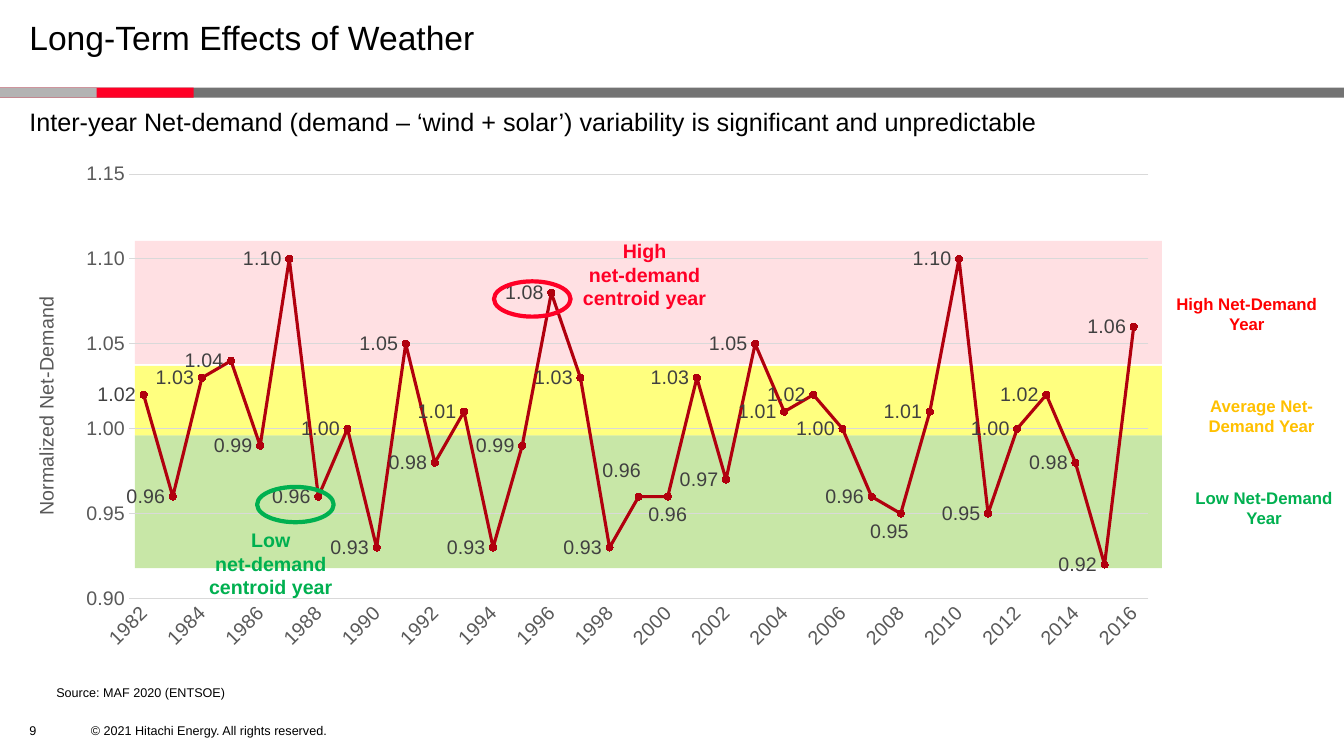
from lxml import etree
from pptx import Presentation
from pptx.chart.data import CategoryChartData
from pptx.dml.color import RGBColor
from pptx.enum.chart import XL_CHART_TYPE, XL_LABEL_POSITION, XL_MARKER_STYLE, XL_TICK_MARK
from pptx.enum.shapes import MSO_SHAPE
from pptx.enum.text import MSO_ANCHOR, PP_ALIGN
from pptx.oxml import parse_xml
from pptx.oxml.ns import nsdecls, qn
from pptx.util import Cm, Pt

RECT, OVAL = MSO_SHAPE.RECTANGLE, MSO_SHAPE.OVAL
LEFT, CENTER = PP_ALIGN.LEFT, PP_ALIGN.CENTER
TOP, MIDDLE = MSO_ANCHOR.TOP, MSO_ANCHOR.MIDDLE
ABOVE, BELOW, BESIDE = XL_LABEL_POSITION.ABOVE, XL_LABEL_POSITION.BELOW, XL_LABEL_POSITION.LEFT
NO_TICK = XL_TICK_MARK.NONE
FONT = "Arial"
HEX = {
    "black": "000000", "bar": "737373", "silver": "B3B3B3", "red": "FF0026",
    "lime": "92D050", "yellow": "FFFF00", "pink": "FFBCC2", "green": "00B050",
    "high": "FF0000", "amber": "FFC000", "line": "B1000E", "grid": "D9D9D9",
    "axis": "595959", "label": "404040",
}
COLOR = {name: RGBColor.from_string(code) for name, code in HEX.items()}


def cm(*nums):
    return [Cm(n) for n in nums]


def write(frame, text, size=14, color="black", bold=False, align=LEFT,
          anchor=TOP, wrap=True, space=None):
    """Fill a text frame with one formatted paragraph, without margins."""
    frame.margin_left = frame.margin_right = frame.margin_top = frame.margin_bottom = 0
    frame.word_wrap = wrap
    frame.vertical_anchor = anchor
    para = frame.paragraphs[0]
    para.text = text
    para.alignment = align
    para.line_spacing = space
    for font in [para.font] + [run.font for run in para.runs]:
        font.name, font.size, font.bold = FONT, Pt(size), bold
        font.color.rgb = COLOR[color]


deck = Presentation()
deck.slide_width, deck.slide_height = cm(33.87, 19.05)
slide = deck.slides.add_slide(deck.slide_layouts[5])
shapes = slide.shapes

# Title and header bar
title = shapes.title
title.left, title.top, title.width, title.height = cm(0.74, 0.25, 26.16, 1.47)
write(title.text_frame, "Long-Term Effects of Weather", size=24, anchor=MIDDLE, space=0.95)

# Header bar pieces and demand bands: top, height, left, width, colour, opacity
blocks = [(2.21, 0.25, 0, width, color, 100)
          for width, color in ((33.87, "bar"), (4.88, "red"), (2.44, "silver"))]
blocks += [
    (10.97, 3.35, 3.4, 25.88, "lime", 50),
    (9.22, 1.75, 3.4, 25.88, "yellow", 50),
    (6.07, 3.1, 3.4, 25.88, "pink", 46),
]
for top, height, left, width, color, alpha in blocks:
    block = shapes.add_shape(RECT, *cm(left, top, width, height))
    block.shadow.inherit = False
    block.fill.solid()
    block.fill.fore_color.rgb = COLOR[color]
    block.line.fill.background()
    if alpha < 100:
        tint = block._element.xpath("./p:spPr//a:srgbClr")[0]
        etree.SubElement(tint, qn("a:alpha")).set("val", str(alpha * 1000))

# Net-demand chart
demand = [
    1.02, 0.96, 1.03, 1.04, 0.99, 1.10, 0.96, 1.00, 0.93, 1.05, 0.98, 1.01,
    0.93, 0.99, 1.08, 1.03, 0.93, 0.96, 0.96, 1.03, 0.97, 1.05, 1.01, 1.02,
    1.00, 0.96, 0.95, 1.01, 1.10, 0.95, 1.00, 1.02, 0.98, 0.92, 1.06,
]
data = CategoryChartData(number_format="0.00")
data.categories = [str(1982 + i) for i in range(len(demand))]
data.add_series("Series 1", demand)
chart = shapes.add_chart(XL_CHART_TYPE.LINE_MARKERS, *cm(0.74, 3.94, 28.57, 12.78), data).chart
chart.has_legend = chart.has_title = False
chart.font.name, chart.font.size = FONT, Pt(14)
plot = chart.plots[0]
plot.vary_by_categories = False

area = chart._chartSpace.xpath("c:chart/c:plotArea")[0]
for old in area.findall(qn("c:layout")):
    area.remove(old)
area.insert(0, parse_xml(
    f'<c:layout {nsdecls("c")}><c:manualLayout><c:layoutTarget val="inner"/>'
    '<c:xMode val="edge"/><c:yMode val="edge"/><c:x val="0.088"/><c:y val="0.035"/>'
    '<c:w val="0.899"/><c:h val="0.837"/></c:manualLayout></c:layout>'))

years, scale = chart.category_axis, chart.value_axis
for axis in (years, scale):
    axis.major_tick_mark = axis.minor_tick_mark = NO_TICK
    font = axis.tick_labels.font
    font.name, font.size, font.color.rgb = FONT, Pt(14), COLOR["axis"]
years.has_major_gridlines = False
scale.has_major_gridlines = True
for line in (years.format.line, scale.major_gridlines.format.line):
    line.color.rgb, line.width = COLOR["grid"], Pt(0.75)
scale.format.line.fill.background()
scale.minimum_scale, scale.maximum_scale, scale.major_unit = 0.9, 1.15, 0.05
scale.tick_labels.number_format = "0.00"
scale.tick_labels.number_format_is_linked = False
years._element.xpath("c:txPr/a:bodyPr")[0].set("rot", "-2700000")
years._element.xpath("c:noMultiLvlLbl")[0].addprevious(
    parse_xml(f'<c:tickLblSkip {nsdecls("c")} val="2"/>'))
name = scale.axis_title.text_frame.paragraphs[0].add_run()
name.text = "Normalized Net-Demand"
name.font.name, name.font.size, name.font.bold = FONT, Pt(14), False
name.font.color.rgb = COLOR["axis"]

series = plot.series[0]
series.smooth = False
series.format.line.color.rgb, series.format.line.width = COLOR["line"], Pt(2.25)
dot = series.marker
dot.style, dot.size = XL_MARKER_STYLE.CIRCLE, 5
dot.format.fill.solid()
dot.format.fill.fore_color.rgb = dot.format.line.color.rgb = COLOR["line"]
labels = series.data_labels
labels.show_value, labels.position = True, BESIDE
labels.number_format, labels.number_format_is_linked = "0.00", False

# Labels moved off the line: point, side, shift as a share of the chart
fonts = [labels.font]
for index, side, across, down in ((17, ABOVE, -0.015, -0.015), (18, BELOW, 0, 0), (26, BELOW, -0.01, 0)):
    label = series.points[index].data_label
    label.position = side
    fonts.append(label.font)
    mark = series._element.xpath(f".//c:dLbl/c:idx[@val='{index}']")[0]
    mark.addnext(parse_xml(
        f'<c:layout {nsdecls("c")}><c:manualLayout><c:x val="{across}"/>'
        f'<c:y val="{down}"/></c:manualLayout></c:layout>'))
for font in fonts:
    font.name, font.size, font.color.rgb = FONT, Pt(14), COLOR["label"]

# Rings around the centroid years
for left, top, color in ((6.48, 12.27, "green"), (12.45, 7.09, "red")):
    ring = shapes.add_shape(OVAL, *cm(left, top, 1.93, 0.89))
    ring.shadow.inherit = False
    ring.fill.background()
    ring.line.color.rgb, ring.line.width = COLOR[color], Pt(3)

# Captions, band names and footer
note = dict(bold=True, align=CENTER, wrap=False)
band = dict(size=12, bold=True, align=CENTER)
foot = dict(size=9, anchor=MIDDLE)
texts = [
    ((0.74, 2.67, 28.22, 1.57),
     "Inter-year Net-demand (demand – ‘wind + solar’) variability is significant and unpredictable",
     dict(size=18)),
    ((14.38, 6.02, 3.73, 2.06), "High\nnet-demand\ncentroid year", dict(note, color="red")),
    ((5.21, 13.31, 3.23, 2.06), "Low\nnet-demand\ncentroid year", dict(note, color="green")),
    ((29.31, 7.39, 4.22, 0.76), "High Net-Demand Year", dict(band, color="high")),
    ((29.74, 9.96, 4.11, 0.76), "Average Net-Demand Year", dict(band, color="amber")),
    ((29.85, 12.29, 4.01, 0.84), "Low Net-Demand Year", dict(band, color="green")),
    ((1.42, 17.2, 6.3, 0.51), "Source: MAF 2020 (ENTSOE)", foot),
    ((0.74, 17.98, 0.84, 0.84), "9", foot),
    ((2.29, 18.14, 6.3, 0.51), "© 2021 Hitachi Energy. All rights reserved.", foot),
]
for place, text, style in texts:
    write(shapes.add_textbox(*cm(*place)).text_frame, text, **style)

deck.save("out.pptx")
